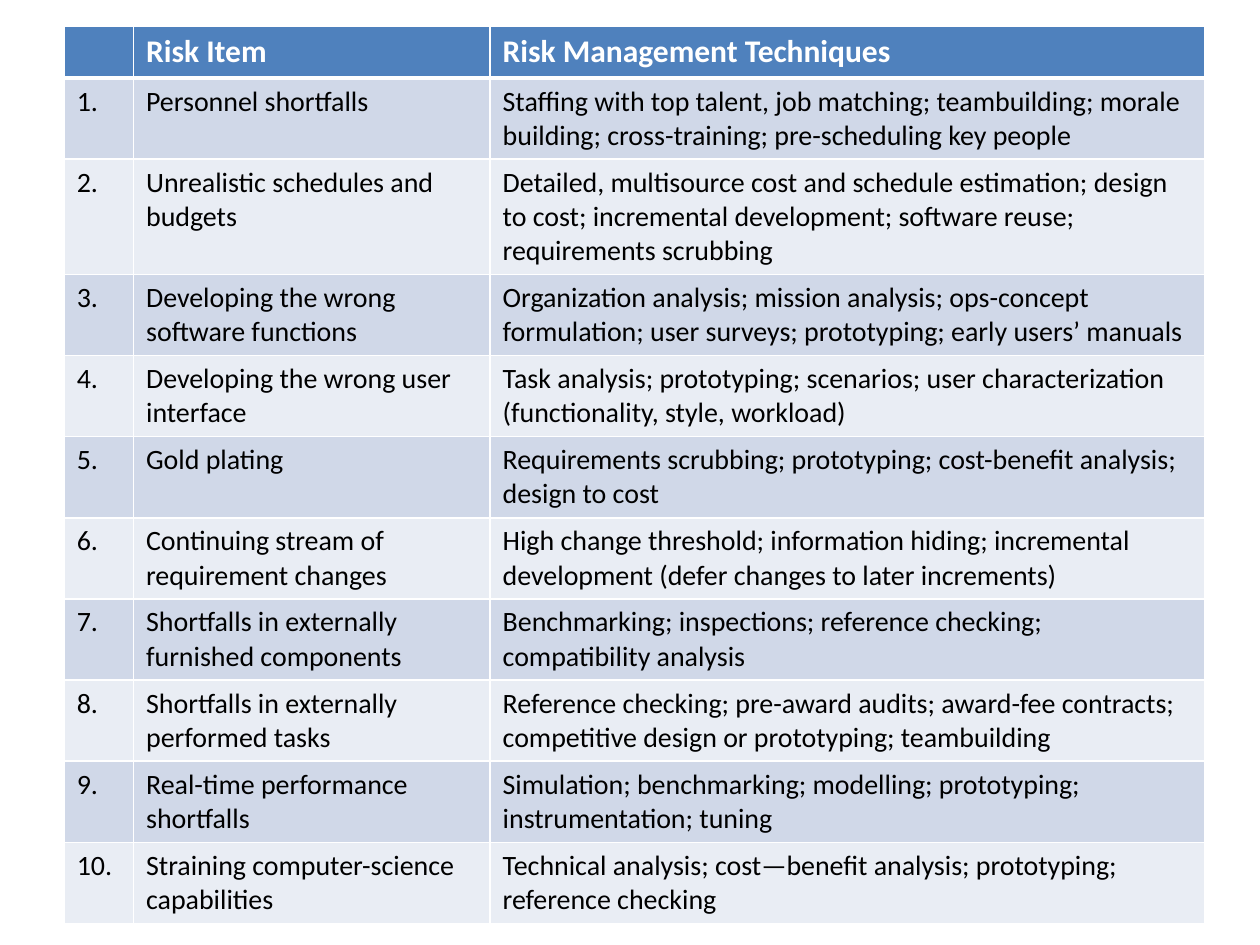
from lxml.etree import SubElement
from pptx import Presentation
from pptx.dml.color import RGBColor as RGB
from pptx.oxml.ns import qn
from pptx.util import Inches, Pt

RISKS = [
    ("Personnel shortfalls",
     "Staffing with top talent, job matching; teambuilding; morale building; "
     "cross-training; pre-scheduling key people"),
    ("Unrealistic schedules and budgets",
     "Detailed, multisource cost and schedule estimation; design to cost; "
     "incremental development; software reuse; requirements scrubbing"),
    ("Developing the wrong software functions",
     "Organization analysis; mission analysis; ops-concept formulation; "
     "user surveys; prototyping; early users’ manuals"),
    ("Developing the wrong user interface",
     "Task analysis; prototyping; scenarios; user characterization "
     "(functionality, style, workload)"),
    ("Gold plating",
     "Requirements scrubbing; prototyping; cost-benefit analysis; design to cost"),
    ("Continuing stream of requirement changes",
     "High change threshold; information hiding; incremental development "
     "(defer changes to later increments)"),
    ("Shortfalls in externally furnished components",
     "Benchmarking; inspections; reference checking; compatibility analysis"),
    ("Shortfalls in externally performed tasks",
     "Reference checking; pre-award audits; award-fee contracts; "
     "competitive design or prototyping; teambuilding"),
    ("Real-time performance shortfalls",
     "Simulation; benchmarking; modelling; prototyping; instrumentation; tuning"),
    ("Straining computer-science capabilities",
     "Technical analysis; cost—benefit analysis; prototyping; reference checking"),
]
WIDTHS = [0.55, 2.83, 5.67]
ROW_HEIGHT = 0.41


def set_cell(cell, text, size=16, color="000000", bold=False, fill="FFFFFF", top=1, bottom=1):
    if text:
        r = cell.text_frame.paragraphs[0].add_run()
        r.text = text
        r.font.name = "Calibri"
        r.font.size = Pt(size)
        r.font.bold = bold
        r.font.color.rgb = RGB.from_string(color)
    tc_pr = cell._tc.get_or_add_tcPr()
    for side, width in (("L", 1), ("R", 1), ("T", top), ("B", bottom)):
        ln = SubElement(tc_pr, qn(f"a:ln{side}"), w=str(Pt(width)))
        SubElement(SubElement(ln, qn("a:solidFill")), qn("a:srgbClr"), val="FFFFFF")
    cell.fill.solid()
    cell.fill.fore_color.rgb = RGB.from_string(fill)


prs = Presentation()
prs.slide_width, prs.slide_height = Inches(10), Inches(7.5)
s = prs.slides.add_slide(prs.slide_layouts[6])

rows = [("", "Risk Item", "Risk Management Techniques")]
rows += [(f"{n}.", *risk) for n, risk in enumerate(RISKS, 1)]
table = s.shapes.add_table(len(rows), len(WIDTHS), Inches(0.51), Inches(0.21),
                           Inches(sum(WIDTHS)), Inches(ROW_HEIGHT * len(rows))).table
for column, width in zip(table.columns, WIDTHS):
    column.width = Inches(width)

for i, texts in enumerate(rows):
    table.rows[i].height = Inches(ROW_HEIGHT)
    if i == 0:
        style = dict(size=18, color="FFFFFF", bold=True, fill="4F81BD", bottom=3)
    else:
        style = dict(fill="D0D8E8" if i % 2 else "E9EDF4", top=3 if i == 1 else 1)
    for j, text in enumerate(texts):
        set_cell(table.cell(i, j), text, **style)

prs.save("out.pptx")
